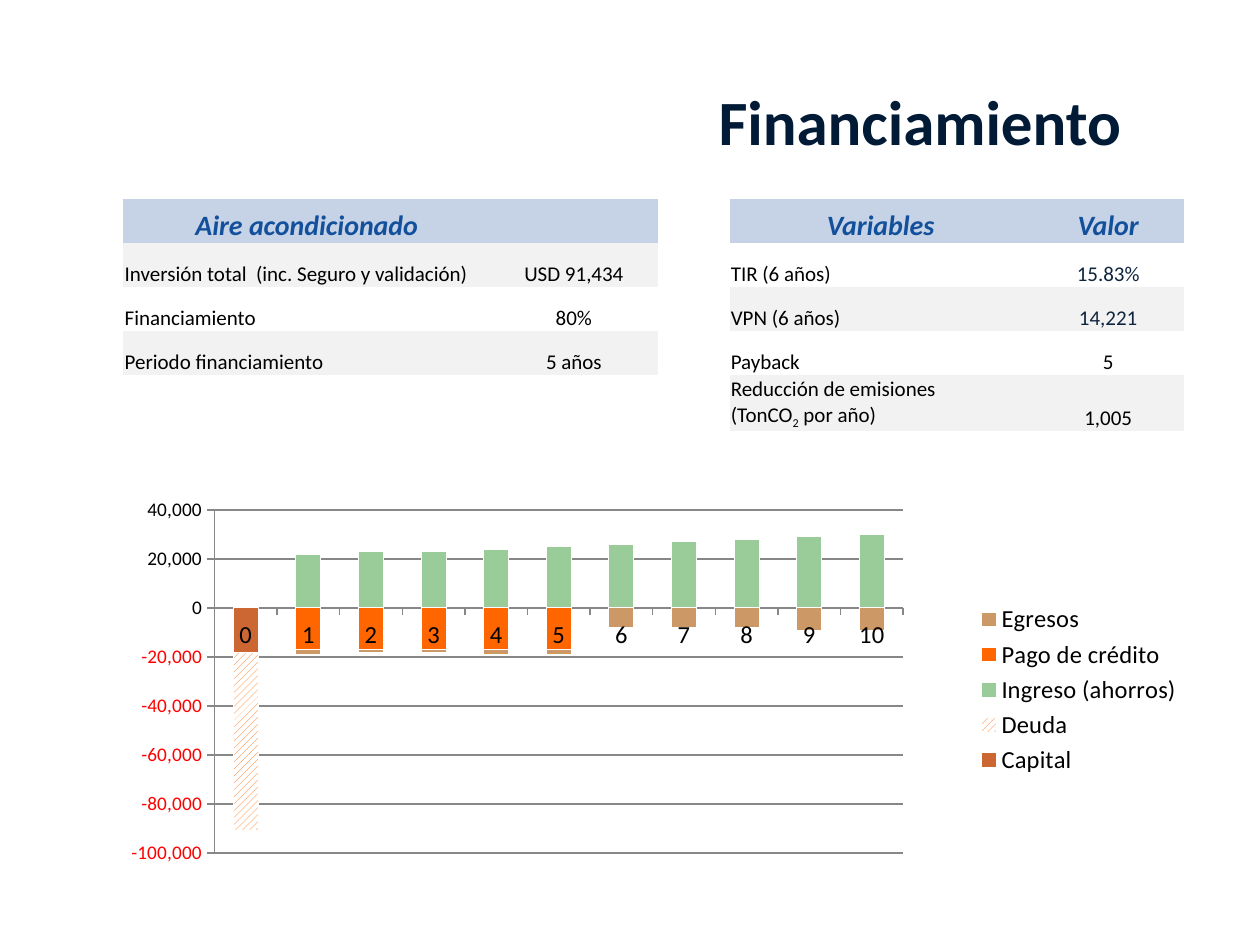
from dataclasses import dataclass

from lxml.etree import SubElement
from pptx import Presentation
from pptx.chart.chart import Chart
from pptx.chart.data import CategoryChartData
from pptx.dml.color import RGBColor
from pptx.enum.chart import XL_CHART_TYPE, XL_LEGEND_POSITION, XL_TICK_MARK
from pptx.enum.dml import MSO_PATTERN
from pptx.enum.text import MSO_ANCHOR, PP_ALIGN
from pptx.oxml.ns import qn
from pptx.slide import Slide
from pptx.table import _Cell
from pptx.text.text import Font
from pptx.util import Inches, Pt

FONT = "Calibri"
COLUMNS, ROWS = 10, 7.5
PAGE_WIDTH, PAGE_HEIGHT = Inches(10), Inches(7.5)
COLORS = {
    "title": "011B37", "heading": "13509C", "header": "C6D2E6", "text": "000000",
    "accent": "0F243E", "band": "F2F2F2", "plain": "FFFFFF", "axis": "878787",
    "capital": "CC6633", "debt": "FF6600", "income": "99CC99",
    "credit": "FF6600", "expense": "CC9966",
}
NO_STYLE = "{2D5ABB26-0587-4C30-8999-92F81FD0307C}"
LEFT, TABLE_TOP, TABLE_ROW = 0.98, 1.58, 0.35
PLOT_AREA = {"x": 0.085, "y": 0.035, "w": 0.643, "h": 0.887}


@dataclass(frozen=True)
class Grid:
    """A table with its place, column widths, text and first body fill."""

    left: float
    widths: tuple[float, ...]
    rows: tuple[tuple[str, ...], ...]
    fills: tuple[str, str]
    accent_rows: tuple[int, ...] = ()
    last_height: float = TABLE_ROW


@dataclass(frozen=True)
class Flow:
    """One series of the cash flow chart."""

    name: str
    color: str
    thousands: tuple[int | None, ...]
    hatched: bool = False


GRIDS = (
    Grid(5.79, (2.4, 1.21), (
        ("Variables", "Valor"),
        ("TIR (6 años)", "15.83%"),
        ("VPN (6 años)", "14,221"),
        ("Payback", "5"),
        ("Reducción de emisiones\n(TonCO~2~ por año)", "1,005"),
    ), ("plain", "band"), accent_rows=(1, 2), last_height=0.41),
    Grid(LEFT, (2.91, 1.33), (
        ("Aire acondicionado", ""),
        ("Inversión total  (inc. Seguro y validación)", "USD 91,434"),
        ("Financiamiento", "80%"),
        ("Periodo financiamiento", "5 años"),
    ), ("band", "plain")),
)
FLOWS = (
    Flow("Capital", "capital", (-18,) + (None,) * 10),
    Flow("Deuda", "debt", (-73,) + (None,) * 10, hatched=True),
    Flow("Ingreso (ahorros)", "income", (None, 22, 23, 23, 24, 25, 26, 27, 28, 29, 30)),
    Flow("Pago de crédito", "credit", (None,) + (-17,) * 5 + (0,) * 5),
    Flow("Egresos", "expense", (None, -2, -1, -1, -2, -2, -8, -8, -8, -9, -9)),
)


def across(columns: float) -> int:
    """Turn page columns into a length."""
    return int(PAGE_WIDTH * columns / COLUMNS)


def down(rows: float) -> int:
    """Turn page rows into a length."""
    return int(PAGE_HEIGHT * rows / ROWS)


def rgb(name: str) -> RGBColor:
    """Look up a named colour."""
    return RGBColor.from_string(COLORS[name])


def set_font(font: Font, size: float, color: str, bold: bool = False, italic: bool = False) -> None:
    """Apply the typeface, size, colour and style."""
    font.name, font.size, font.bold, font.italic = FONT, Pt(size), bold, italic
    font.color.rgb = rgb(color)


def add_title(page: Slide, text: str) -> None:
    """Place and format the title placeholder."""
    title = page.shapes.title
    title.left, title.top, title.width, title.height = across(1.12), down(0.6), across(7.88), down(0.71)
    frame = title.text_frame
    frame.text = text
    frame.word_wrap = True
    frame.vertical_anchor = MSO_ANCHOR.MIDDLE
    para = frame.paragraphs[0]
    para.alignment = PP_ALIGN.RIGHT
    set_font(para.font, 36, "title", bold=True)


def fill_cell(cell: _Cell, text: str, fill: str, color: str, centred: bool, heading: bool) -> None:
    """Write one cell, with text between tildes set as subscript."""
    cell.fill.solid()
    cell.fill.fore_color.rgb = rgb(fill)
    cell.vertical_anchor = MSO_ANCHOR.BOTTOM
    cell.margin_left = cell.margin_right = cell.margin_top = Inches(0.01)
    cell.margin_bottom = 0
    for index, line in enumerate(text.split("\n")):
        frame = cell.text_frame
        para = frame.add_paragraph() if index else frame.paragraphs[0]
        para.alignment = PP_ALIGN.CENTER if centred else PP_ALIGN.LEFT
        set_font(para.font, 16 if heading else 12, color, heading, heading)
        for part, words in enumerate(line.split("~")):
            span = para.add_run()
            span.text = words
            if part % 2:
                span._r.get_or_add_rPr().set("baseline", "-25000")


def add_grid(page: Slide, grid: Grid) -> None:
    """Draw a table with a heading row and alternating body rows."""
    count = len(grid.rows)
    height = TABLE_ROW * (count - 1) + grid.last_height
    frame = page.shapes.add_table(count, len(grid.widths), across(grid.left), down(TABLE_TOP),
                                  across(sum(grid.widths)), down(height))
    table = frame.table
    table.first_row = table.horz_banding = False
    table._tbl.tblPr.find(qn("a:tableStyleId")).text = NO_STYLE
    for column, width in zip(table.columns, grid.widths):
        column.width = across(width)
    for row, texts in enumerate(grid.rows):
        heading = row == 0
        table.rows[row].height = down(grid.last_height if row == count - 1 else TABLE_ROW)
        fill = "header" if heading else grid.fills[(row - 1) % 2]
        for column, text in enumerate(texts):
            accent = column == 1 and row in grid.accent_rows
            color = "heading" if heading else "accent" if accent else "text"
            fill_cell(table.cell(row, column), text, fill, color, heading or column == 1, heading)


def style_axes(chart: Chart) -> None:
    """Format both axes and the gridlines."""
    category, value = chart.category_axis, chart.value_axis
    for axis, size, pattern in ((category, 14, "0"), (value, 11, "#,##0;[Red]-#,##0")):
        axis.major_tick_mark = XL_TICK_MARK.OUTSIDE
        axis.format.line.color.rgb = rgb("axis")
        axis.tick_labels.number_format = pattern
        axis.tick_labels.number_format_is_linked = False
        set_font(axis.tick_labels.font, size, "text")
    value.minimum_scale, value.maximum_scale, value.major_unit = -100000, 40000, 20000
    value.has_major_gridlines = True
    value.major_gridlines.format.line.color.rgb = rgb("axis")


def set_plot_area(chart: Chart) -> None:
    """Fix the inner plot area as shares of the chart."""
    area = chart._chartSpace.chart.plotArea
    for old in area.findall(qn("c:layout")):
        area.remove(old)
    layout = SubElement(area, qn("c:layout"))
    area.insert(0, layout)
    manual = SubElement(layout, qn("c:manualLayout"))
    settings = {"layoutTarget": "inner", "xMode": "edge", "yMode": "edge", **PLOT_AREA}
    for name, setting in settings.items():
        SubElement(manual, qn(f"c:{name}")).set("val", str(setting))


def add_cash_flow(page: Slide) -> None:
    """Draw the stacked cash flow chart."""
    data = CategoryChartData(number_format="#,##0")
    data.categories = range(11)
    for flow in FLOWS:
        data.add_series(flow.name, [None if v is None else v * 1000 for v in flow.thousands])
    chart = page.shapes.add_chart(XL_CHART_TYPE.COLUMN_STACKED, across(LEFT), down(3.94),
                                  across(8.5), down(3.07), data).chart
    set_font(chart.font, 18, "text")
    chart.has_title = False
    chart.has_legend = True
    chart.legend.position = XL_LEGEND_POSITION.RIGHT
    chart.legend.include_in_layout = False
    set_font(chart.legend.font, 14, "text")
    plot = chart.plots[0]
    plot.gap_width, plot.overlap, plot.vary_by_categories = 150, 100, False
    for series, flow in zip(plot.series, FLOWS):
        series.invert_if_negative = False
        fill = series.format.fill
        if flow.hatched:
            fill.patterned()
            fill.pattern = MSO_PATTERN.WIDE_UPWARD_DIAGONAL
            fill.back_color.rgb = rgb("plain")
        else:
            fill.solid()
        fill.fore_color.rgb = rgb(flow.color)
        series.format.line.color.rgb = rgb("plain")
    style_axes(chart)
    set_plot_area(chart)


def main() -> None:
    """Build and save the financing slide."""
    deck = Presentation()
    deck.slide_width, deck.slide_height = PAGE_WIDTH, PAGE_HEIGHT
    page = deck.slides.add_slide(deck.slide_layouts[5])
    add_title(page, "Financiamiento")
    add_cash_flow(page)
    for grid in GRIDS:
        add_grid(page, grid)
    deck.save("out.pptx")


if __name__ == "__main__":
    main()
